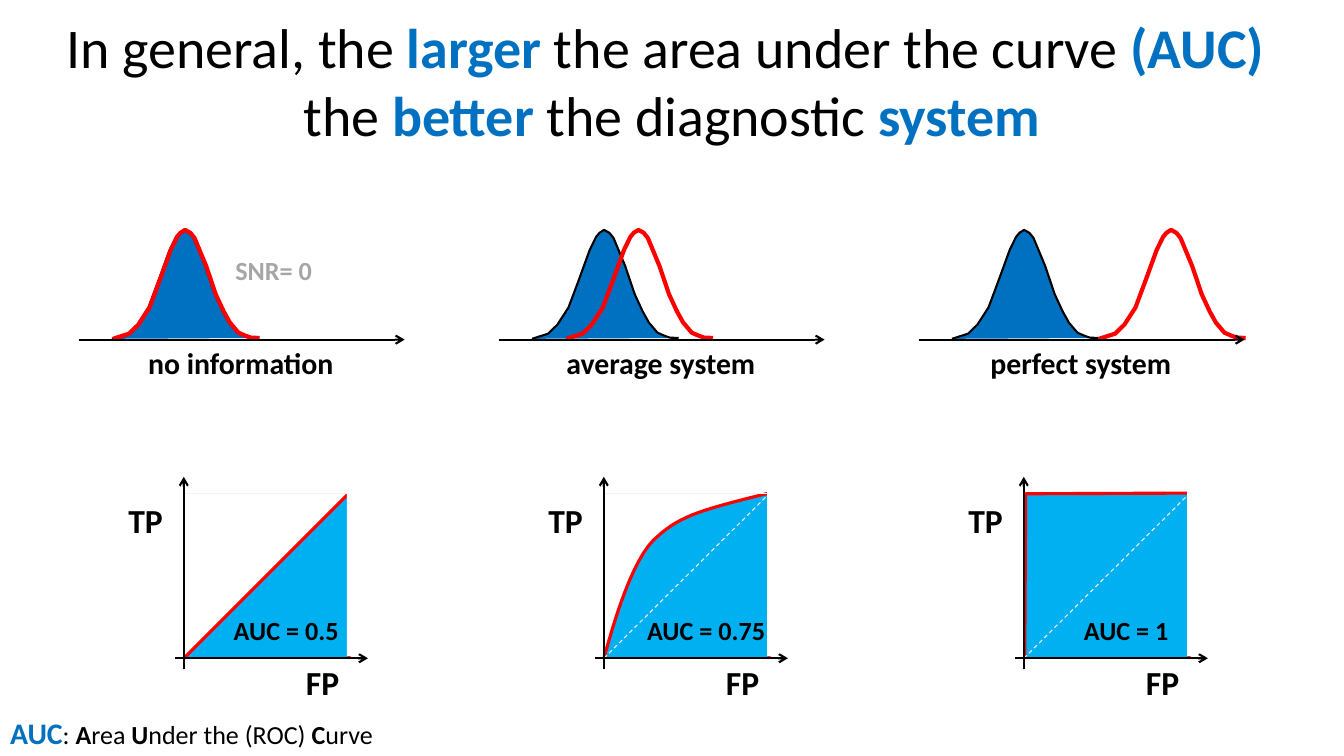
from dataclasses import dataclass

from lxml.etree import SubElement
from pptx import Presentation
from pptx.dml.color import RGBColor
from pptx.enum.dml import MSO_LINE
from pptx.enum.shapes import MSO_CONNECTOR, MSO_SHAPE
from pptx.enum.text import MSO_ANCHOR, MSO_AUTO_SIZE, PP_ALIGN
from pptx.oxml.ns import qn
from pptx.util import Pt

Points = list[tuple[float, float]]

BLACK, WHITE, RED = "000000", "FFFFFF", "FF0000"
BLUE, SKY, PALE, GREY = "0070C0", "00B0F0", "F2F2F2", "A6A6A6"

PITCH = 300
BELL_LEFT = 80
BELL_AXIS = 242.6
ROC_LEFT, ROC_TOP, ROC_SIDE = 131.3, 352.2, 118
ROC_BASE = ROC_TOP + ROC_SIDE

BELL: Points = [
    (0, 242), (11.6, 238.3), (18.2, 231.8), (26.1, 219.6), (33.1, 200.9),
    (41.2, 178.6), (45.8, 169.2), (48.2, 166.3), (51.5, 164.2), (55.3, 166.3),
    (58.2, 169.9), (61.5, 177.8), (66.6, 190.1), (73.4, 210.2), (79.1, 222.5),
    (83.5, 230.4), (89.6, 237.6), (94.6, 239.8), (98.6, 241.2), (104.8, 241.4),
]


@dataclass
class Span:
    text: str
    size: float
    color: str = BLACK
    bold: bool = True


@dataclass
class System:
    label: str
    area: str
    red_shift: float
    roc: Points
    top_line: bool
    diagonal: bool
    cover_left: float
    cover_width: float


def bezier(corners: Points, steps: int = 16) -> Points:
    curve = []
    for step in range(1, steps + 1):
        t = step / steps
        weights = ((1 - t) ** 3, 3 * t * (1 - t) ** 2, 3 * t * t * (1 - t), t ** 3)
        curve.append((sum(w * x for w, (x, _) in zip(weights, corners)),
                      sum(w * y for w, (_, y) in zip(weights, corners))))
    return curve


ORIGIN, KNEE, END = (0, ROC_SIDE), (35.3, 33.8), (ROC_SIDE, 0)
CORNER = (ROC_SIDE, ROC_SIDE)
AVERAGE_ROC = [
    ORIGIN,
    *bezier([ORIGIN, (0.7, 117.4), (15.8, 53.3), KNEE]),
    *bezier([KNEE, (52.6, 17.3), (64.8, 13), END]),
    CORNER,
]

SYSTEMS = [
    System("no information", "AUC = 0.5", 0.7, [ORIGIN, END, CORNER], True, False, 247.7, 3.6),
    System("average system", "AUC = 0.75", 24.5, AVERAGE_ROC, True, True, 247.9, 7.2),
    System("perfect system", "AUC = 1", 105, [(0.7, ROC_SIDE), (1.4, 0.5), END, CORNER],
           False, True, 248, 3.6),
]


def rgb(color: str) -> RGBColor:
    return RGBColor.from_string(color)


def write(para, spans: list[Span]) -> None:
    para.alignment = PP_ALIGN.CENTER
    for span in spans:
        run = para.add_run()
        run.text = span.text
        run.font.name = "Calibri"
        run.font.size = Pt(span.size)
        run.font.bold = span.bold
        run.font.color.rgb = rgb(span.color)


def add_text(page, center: float, top: float, width: float, height: float,
             spans: list[Span]) -> None:
    box = page.shapes.add_textbox(Pt(center - width / 2), Pt(top), Pt(width), Pt(height))
    box.text_frame.word_wrap = False
    box.text_frame.auto_size = MSO_AUTO_SIZE.SHAPE_TO_FIT_TEXT
    write(box.text_frame.paragraphs[0], spans)


def add_outline(page, points: Points, left: float, top: float,
                fill: str | None, color: str, weight: float) -> None:
    start, *rest = [(Pt(left + x), Pt(top + y)) for x, y in points]
    builder = page.shapes.build_freeform(*start, scale=1.0)
    builder.add_line_segments(rest, close=False)
    outline = builder.convert_to_shape()
    outline.shadow.inherit = False
    if fill:
        outline.fill.solid()
        outline.fill.fore_color.rgb = rgb(fill)
    else:
        outline.fill.background()
    outline.line.color.rgb = rgb(color)
    outline.line.width = Pt(weight)


def add_line(page, x1: float, y1: float, x2: float, y2: float, color: str = PALE,
             weight: float = 0.75, dashed: bool = False, arrow: bool = False) -> None:
    connector = page.shapes.add_connector(
        MSO_CONNECTOR.STRAIGHT, Pt(x1), Pt(y1), Pt(x2), Pt(y2))
    connector.line.color.rgb = rgb(color)
    connector.line.width = Pt(weight)
    if dashed:
        connector.line.dash_style = MSO_LINE.DASH
    properties = connector._element.spPr
    if arrow:
        SubElement(properties.find(qn("a:ln")), qn("a:tailEnd"), type="arrow")
    SubElement(properties, qn("a:effectLst"))


def add_axis(page, x1: float, y1: float, x2: float, y2: float) -> None:
    add_line(page, x1, y1, x2, y2, BLACK, 1.5, arrow=True)


def draw_bells(page, system: System, shift: float) -> None:
    left = BELL_LEFT + shift
    add_outline(page, BELL, left, 0, BLUE, BLACK, 1.5)
    add_outline(page, BELL, left + system.red_shift, 0, None, RED, 3)
    add_axis(page, 56.2 + shift, BELL_AXIS, 289 + shift, BELL_AXIS)
    add_text(page, 172 + shift, BELL_AXIS, 160, 33, [Span(system.label, 21.3)])


def draw_roc(page, system: System, shift: float) -> None:
    left = ROC_LEFT + shift
    right = left + ROC_SIDE
    add_outline(page, system.roc, left, ROC_TOP, SKY, RED, 2.25)
    if system.top_line:
        add_line(page, left, ROC_TOP + 0.6, right, ROC_TOP + 0.6)
    if system.diagonal:
        add_line(page, left, ROC_BASE, right, ROC_TOP + 0.6, dashed=True)
    add_text(page, 204.4 + shift, 435.6, 110, 30, [Span(system.area, 18.7)])
    add_axis(page, left - 6, ROC_BASE, left + 131.5, ROC_BASE)
    add_text(page, 230.4 + shift, 469.4, 44, 36, [Span("FP", 24)])
    add_axis(page, left, ROC_BASE + 7.8, left, 340.6)
    add_text(page, 104 + shift, 353.5, 44, 36, [Span("TP", 24)])
    cover = page.shapes.add_shape(
        MSO_SHAPE.RECTANGLE, Pt(system.cover_left + shift), Pt(343.5),
        Pt(system.cover_width), Pt(125.3))
    cover.shadow.inherit = False
    cover.fill.solid()
    cover.fill.fore_color.rgb = rgb(WHITE)
    cover.line.fill.background()


def draw_title(page) -> None:
    title = page.shapes.title
    title.left, title.top, title.width, title.height = Pt(26.6), Pt(12.2), Pt(906.5), Pt(90)
    frame = title.text_frame
    frame.word_wrap = True
    frame.auto_size = MSO_AUTO_SIZE.NONE
    frame.vertical_anchor = MSO_ANCHOR.MIDDLE
    para = frame.paragraphs[0]
    write(para, [Span("In general, the ", 40, bold=False), Span("larger", 40, BLUE),
                 Span(" the area under the curve", 40, bold=False),
                 Span(" (AUC) ", 40, BLUE)])
    para.add_line_break()
    write(para, [Span("the ", 40, bold=False), Span("better", 40, BLUE),
                 Span(" the diagnostic ", 40, bold=False), Span("system", 40, BLUE)])


def main() -> None:
    deck = Presentation()
    deck.slide_width, deck.slide_height = Pt(960), Pt(540)
    page = deck.slides.add_slide(deck.slide_layouts[5])
    draw_title(page)
    for index, system in enumerate(SYSTEMS):
        draw_bells(page, system, index * PITCH)
        draw_roc(page, system, index * PITCH)
    add_text(page, 195.5, 177.8, 80, 30, [Span("SNR= 0", 18.7, GREY)])
    legend = [(": ", False), ("A", True), ("rea ", False), ("U", True),
              ("nder the (ROC) ", False), ("C", True), ("urve", False)]
    add_text(page, 136.8, 506.9, 280, 33, [
        Span("AUC", 21.3, BLUE),
        *(Span(text, 18.6, bold=bold) for text, bold in legend)])
    deck.save("out.pptx")


if __name__ == "__main__":
    main()
